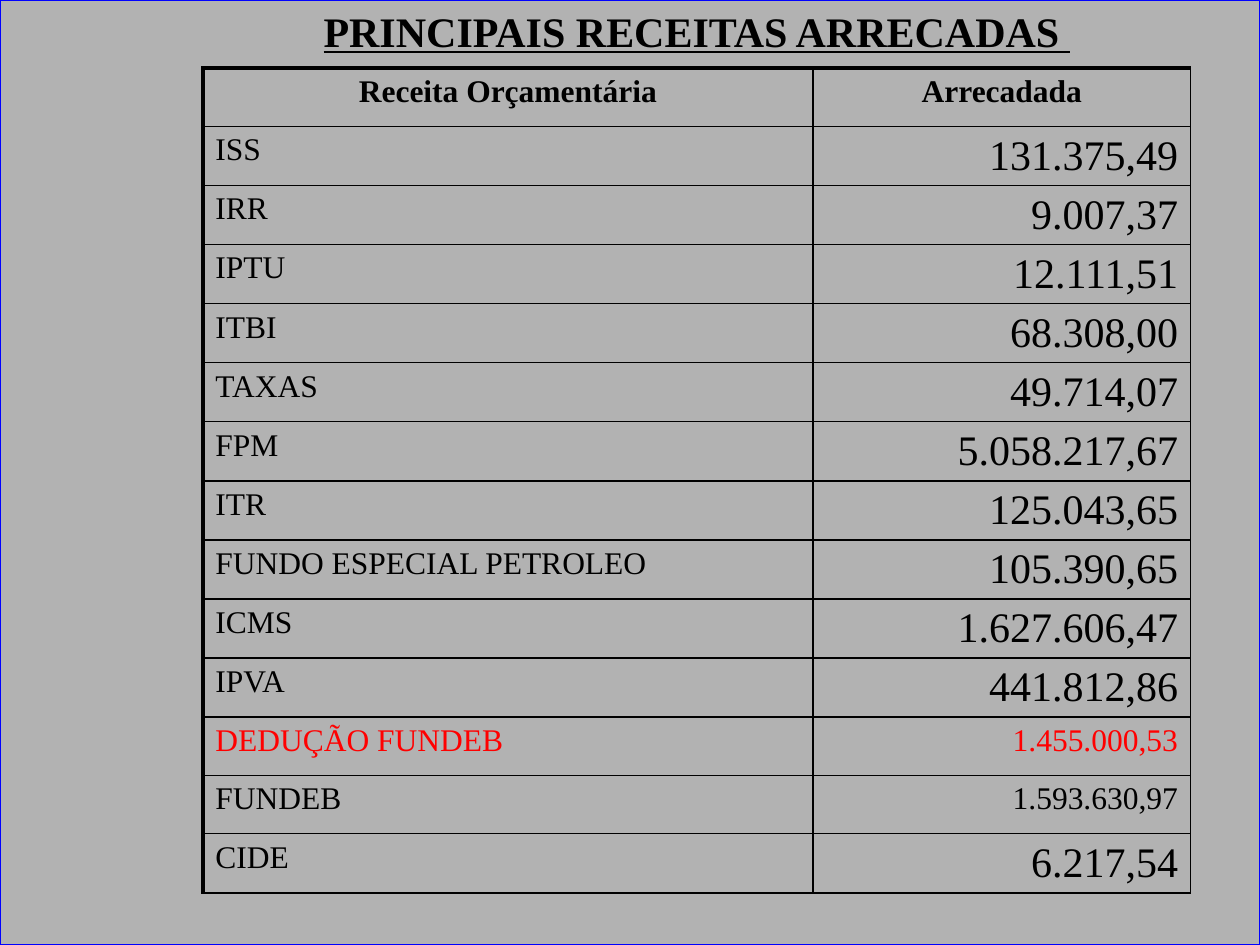
from dataclasses import dataclass

from lxml import etree
from pptx import Presentation
from pptx.dml.color import RGBColor
from pptx.enum.shapes import MSO_SHAPE
from pptx.enum.text import MSO_ANCHOR, PP_ALIGN
from pptx.oxml.ns import qn
from pptx.util import Inches, Pt

RECTANGLE = MSO_SHAPE.RECTANGLE
TOP = MSO_ANCHOR.TOP
LEFT, CENTER, RIGHT = PP_ALIGN.LEFT, PP_ALIGN.CENTER, PP_ALIGN.RIGHT
TITLE_ONLY = 5


@dataclass(frozen=True)
class Theme:
    font: str = "Times New Roman"
    ink: str = "000000"
    deduction: str = "FF0000"
    backdrop: str = "B2B2B2"
    frame: str = "0000FF"
    large: int = 24
    normal: int = 18
    thin: float = 1
    thick: float = 2.25


THEME = Theme()
TITLE = "PRINCIPAIS RECEITAS ARRECADAS "
HEADINGS = ("Receita Orçamentária", "Arrecadada")
REVENUES = [
    ("ISS", "131.375,49"),
    ("IRR", "9.007,37"),
    ("IPTU", "12.111,51"),
    ("ITBI", "68.308,00"),
    ("TAXAS", "49.714,07"),
    ("FPM", "5.058.217,67"),
    ("ITR", "125.043,65"),
    ("FUNDO ESPECIAL PETROLEO", "105.390,65"),
    ("ICMS", "1.627.606,47"),
    ("IPVA", "441.812,86"),
    ("DEDUÇÃO FUNDEB", "1.455.000,53"),
    ("FUNDEB", "1.593.630,97"),
    ("CIDE", "6.217,54"),
]
DEDUCTIONS = {"DEDUÇÃO FUNDEB"}
SMALL_AMOUNTS = {"DEDUÇÃO FUNDEB", "FUNDEB"}
COLUMN_SHARES = (4.85, 3)


def write_text(frame, text, size=THEME.normal, color=THEME.ink, align=LEFT,
               bold=False, underline=False):
    paragraph = frame.paragraphs[0]
    paragraph.alignment = align
    run = paragraph.add_run()
    run.text = text
    font = run.font
    font.name, font.size = THEME.font, Pt(size)
    font.bold, font.underline = bold, underline
    font.color.rgb = RGBColor.from_string(color)


def set_borders(cell, **widths):
    properties = cell._tc.get_or_add_tcPr()
    for position, side in enumerate("LRTB"):
        width = widths.get(side, THEME.thin)
        line = etree.Element(qn(f"a:ln{side}"), w=str(Pt(width)))
        fill = etree.SubElement(line, qn("a:solidFill"))
        etree.SubElement(fill, qn("a:srgbClr"), val=THEME.ink)
        properties.insert(position, line)


def add_backdrop(slide, box):
    shape = slide.shapes.add_shape(RECTANGLE, *box)
    shape.shadow.inherit = False
    shape.fill.solid()
    shape.fill.fore_color.rgb = RGBColor.from_string(THEME.backdrop)
    shape.line.color.rgb = RGBColor.from_string(THEME.frame)
    shape.line.width = Pt(0.75)


def add_revenue_table(slide, box):
    left, top, width, height = box
    rows = [HEADINGS, *REVENUES]
    table = slide.shapes.add_table(len(rows), len(HEADINGS), *box).table
    table.first_row = table.horz_banding = False
    for column, share in zip(table.columns, COLUMN_SHARES):
        column.width = int(width * share / sum(COLUMN_SHARES))
    for row in table.rows:
        row.height = height // len(rows)

    for row_index, (name, amount) in enumerate(rows):
        heading = row_index == 0
        color = THEME.deduction if name in DEDUCTIONS else THEME.ink
        small = heading or name in SMALL_AMOUNTS
        amount_size = THEME.normal if small else THEME.large
        columns = ((name, THEME.normal, LEFT), (amount, amount_size, RIGHT))
        for column_index, (text, size, align) in enumerate(columns):
            cell = table.cell(row_index, column_index)
            cell.fill.background()
            cell.vertical_anchor = TOP
            write_text(cell.text_frame, text, size=size, color=color,
                       align=CENTER if heading else align, bold=heading)
            set_borders(cell,
                        L=THEME.thin if column_index else THEME.thick,
                        T=THEME.thick if heading else THEME.thin)


def place_title(slide, box):
    title = slide.shapes.title
    title.left, title.top, title.width, title.height = box
    title.text_frame.word_wrap = True
    title.text_frame.vertical_anchor = TOP
    write_text(title.text_frame, TITLE, size=THEME.large, align=CENTER,
               bold=True, underline=True)
    title.element.getparent().append(title.element)


def main():
    presentation = Presentation()
    presentation.slide_width, presentation.slide_height = Inches(10), Inches(7.5)
    width, height = presentation.slide_width, presentation.slide_height
    slide = presentation.slides.add_slide(presentation.slide_layouts[TITLE_ONLY])
    add_backdrop(slide, (0, 0, width, height))
    add_revenue_table(slide, (Inches(1.61), Inches(0.54), Inches(7.84), Inches(6.48)))
    place_title(slide, (Inches(1.06), Inches(-0.01), Inches(8.94), Inches(1.1)))
    presentation.save("out.pptx")


if __name__ == "__main__":
    main()
